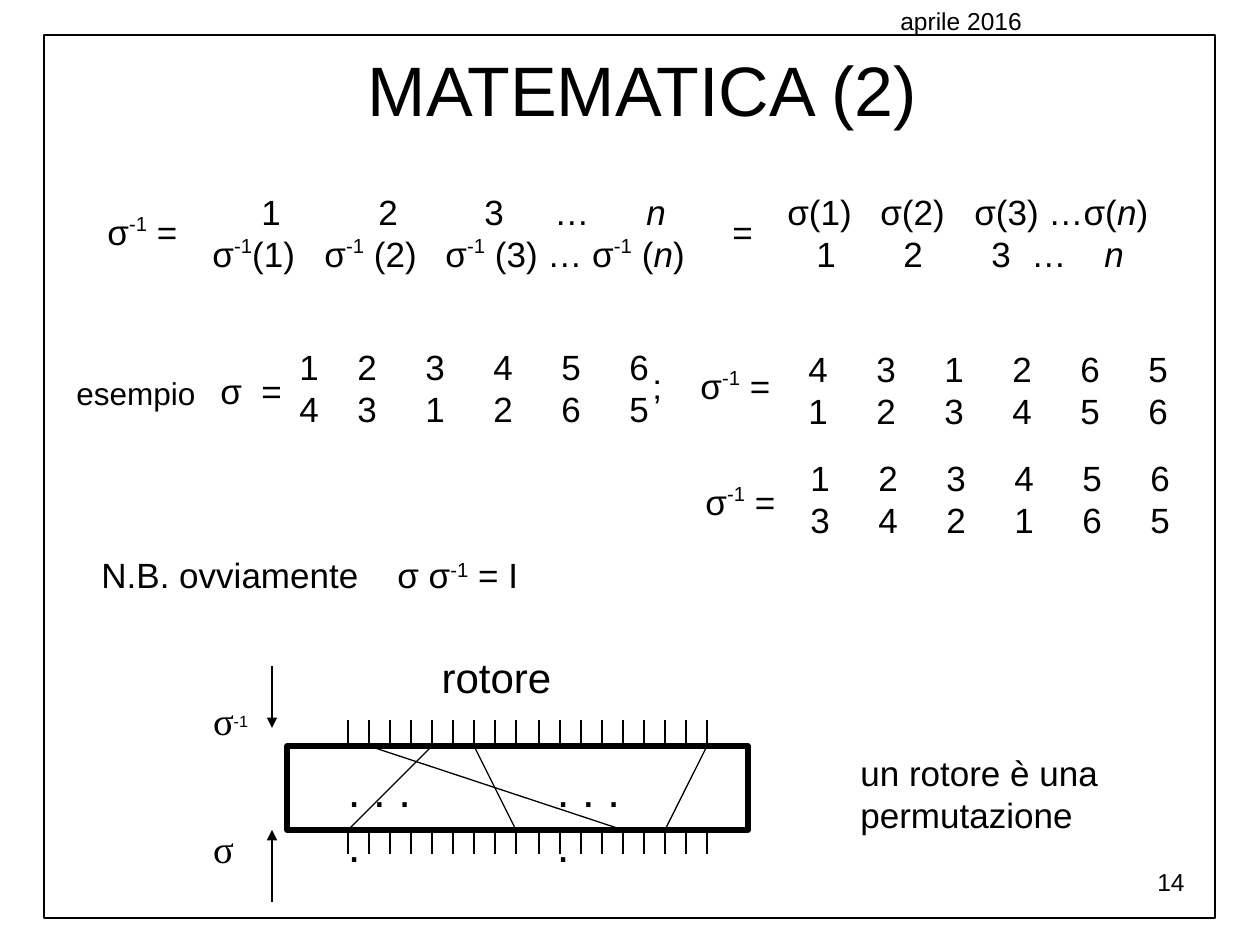
from lxml.etree import SubElement
from pptx import Presentation
from pptx.dml.color import RGBColor
from pptx.enum.shapes import MSO_CONNECTOR, MSO_SHAPE
from pptx.enum.text import MSO_ANCHOR, PP_ALIGN
from pptx.oxml.ns import qn
from pptx.util import Pt

PX = 914400 / 126  # EMU in one px
BLACK = RGBColor(0x00, 0x00, 0x00)
WHITE = RGBColor(0xFF, 0xFF, 0xFF)
SIX_COLUMNS = [68 * i for i in range(1, 6)]


def emu(*lengths):
    return [round(n * PX) for n in lengths]


def add_run(p, text, size, font, italic=False, raised=0):
    r = p.add_run()
    r.text = text
    f = r.font
    f.size, f.name, f.color.rgb = Pt(size), font, BLACK
    if italic:
        f.italic = True
    if raised:
        r._r.get_or_add_rPr().set("baseline", str(raised * 1000))


def add_text(s, box, rows, size=20, font="Arial", align=PP_ALIGN.LEFT, tabs=(),
             spaced=True, inset=True, fill=None, raised=40, raised_size=None):
    """Write rows of text; ^x^ is superscript, *x* italic; one tab list per row."""
    if fill is None:
        sp = s.shapes.add_textbox(*emu(*box))
    else:
        sp = add_rect(s, box, fill=fill)
    tf = sp.text_frame
    tf.word_wrap = True
    tf.vertical_anchor = MSO_ANCHOR.TOP
    if not inset:
        tf.margin_left = tf.margin_right = tf.margin_top = tf.margin_bottom = 0
    for i, row in enumerate(rows):
        p = tf.paragraphs[0] if i == 0 else tf.add_paragraph()
        p.alignment = align
        pPr = p._p.get_or_add_pPr()
        if spaced:
            before = SubElement(pPr, qn("a:spcBef"))
            SubElement(before, qn("a:spcPct"), val="50000")
        if i < len(tabs):
            stops = SubElement(pPr, qn("a:tabLst"))
            for pos in emu(*tabs[i]):
                SubElement(stops, qn("a:tab"), pos=str(pos), algn="l")
        for j, part in enumerate(row.split("^")):
            if j % 2:
                add_run(p, part, raised_size or size, "Arial", raised=raised)
                continue
            for k, piece in enumerate(part.split("*")):
                if piece:
                    add_run(p, piece, size, font, italic=k % 2 == 1)
    return sp


def add_rect(s, box, fill=None, line=None):
    sp = s.shapes.add_shape(MSO_SHAPE.RECTANGLE, *emu(*box))
    sp.shadow.inherit = False
    if fill is None:
        sp.fill.background()
    else:
        sp.fill.solid()
        sp.fill.fore_color.rgb = fill
    if line is None:
        sp.line.fill.background()
    else:
        sp.line.color.rgb, sp.line.width = BLACK, Pt(line)
    return sp


def add_line(s, x1, y1, x2, y2, arrow=False):
    c = s.shapes.add_connector(MSO_CONNECTOR.STRAIGHT, *emu(x1, y1, x2, y2))
    c.line.color.rgb, c.line.width = BLACK, Pt(0.75)
    if arrow:
        SubElement(c.line._get_or_add_ln(), qn("a:tailEnd"), type="triangle")
    SubElement(c._element.spPr, qn("a:effectLst"))


def add_matrix(s, x, y, w, rows, tabs):
    add_text(s, (x, y, w, 97), rows, tabs=tabs, spaced=False)


def add_label(s, x, y, w, text, *stops, **fmt):
    add_text(s, (x, y, w, 54), [text], tabs=[stops] if stops else (), **fmt)


def build_definition(s, x, y):
    """The inverse permutation, written in two ways."""
    add_matrix(s, x + 680, y, 392,
               ["σ(1)\tσ(2)\tσ(3) …σ(*n*)", "\t1\t2\t3\t…\t*n*"],
               [(93, 187), (29, 116, 204, 244, 317)])
    add_label(s, x, y + 20, 110, "σ^-1^ =")
    add_matrix(s, x + 105, y, 522,
               ["\t1\t2\t3\t…\t*n*",
                "σ^-1^(1)\tσ^-1^ (2)\tσ^-1^ (3) … σ^-1^ (*n*)"],
               [(49, 166, 272, 342, 434), (112, 233)])
    add_label(s, x + 606, y + 20, 84, "\t=", 19)


def build_example(s, x, y):
    """A permutation of six numbers and its inverse, then sorted."""
    shifted = [10] + [n + 10 for n in [58] + [58 + n for n in SIX_COLUMNS[:-1]]]
    add_matrix(s, x + 213, y, 392,
               ["\t1\t2\t3\t4\t5\t6", "\t4\t3\t1\t2\t6\t5"], [shifted] * 2)
    add_label(s, x + 144, y + 24, 110, "σ\t=", 41)
    add_matrix(s, x + 732, y + 2, 392,
               ["4\t3\t1\t2\t6\t5", "1\t2\t3\t4\t5\t6"], [SIX_COLUMNS] * 2)
    add_label(s, x + 556, y + 19, 169, "\t;\tσ^-1^ =", 20, 68)
    add_label(s, x, y + 29, 149, "esempio", size=18)
    add_matrix(s, x + 734, y + 111, 392,
               ["1\t2\t3\t4\t5\t6", "3\t4\t2\t1\t6\t5"], [SIX_COLUMNS] * 2)
    add_label(s, x + 600, y + 135, 169, "\tσ^-1^ =", 29)


def build_rotor(s, x, y):
    """Rotor with pins, inner wires, labels and direction arrows."""
    top, bottom = y + 95, y + 179
    # Pins: two even groups of nine
    pins = [x + 135 + 21 * i + (2 if i > 8 else 0) for i in range(18)]
    for pin in pins:
        add_line(s, pin, y + 69, pin, y + 203)
    add_rect(s, (x + 74, top, 461, bottom - top), fill=WHITE, line=3)
    # Wires: pin above to pin below
    for above, below in [(4, 0), (6, 8), (17, 15), (1, 13)]:
        add_line(s, pins[above], top, pins[below], bottom)
    for left in (344, 135):
        add_text(s, (x + left, y + 111, 87, 48), [". . . ."], size=26, inset=False)
    # Labels
    label = dict(inset=False, fill=WHITE)
    add_text(s, (x, y + 174, 30, 45), ["σ"], size=22,
             font="Times New Roman", **label)
    add_text(s, (x, y + 46, 59, 66), ["σ^-1^"], size=22, font="Times New Roman",
             raised=30, raised_size=16, **label)
    add_text(s, (x + 209, y, 149, 55), ["rotore"], size=24,
             align=PP_ALIGN.CENTER, **label)
    # Arrows
    add_line(s, x + 59, y + 251, x + 59, bottom, arrow=True)
    add_line(s, x + 59, y + 15, x + 59, y + 77, arrow=True)


def build_frame(s, x, y, w, h):
    """Border, date and page number."""
    add_rect(s, (x, y, w, h), line=0.75)
    add_text(s, (x + 844, 0, 277, 87), ["aprile 2016"], size=14)
    add_text(s, (x + 859, y + 826, 294, 65), ["14"], size=14,
             align=PP_ALIGN.RIGHT, spaced=False)


def main():
    prs = Presentation()
    prs.slide_width, prs.slide_height = emu(1260, 945)
    s = prs.slides.add_slide(prs.slide_layouts[6])

    add_text(s, (69, 40, 1147, 97), ["MATEMATICA (2)"], size=40,
             align=PP_ALIGN.CENTER)
    build_definition(s, 95, 184)
    build_example(s, 64, 339)
    add_label(s, 89, 547, 496, "N.B. ovviamente\tσ σ^-1^ = I", 296, raised=30)
    build_rotor(s, 213, 651)
    add_text(s, (848, 745, 302, 97), ["un rotore è una permutazione"])
    build_frame(s, 44, 35, 1171, 883)

    prs.save("out.pptx")


if __name__ == "__main__":
    main()
